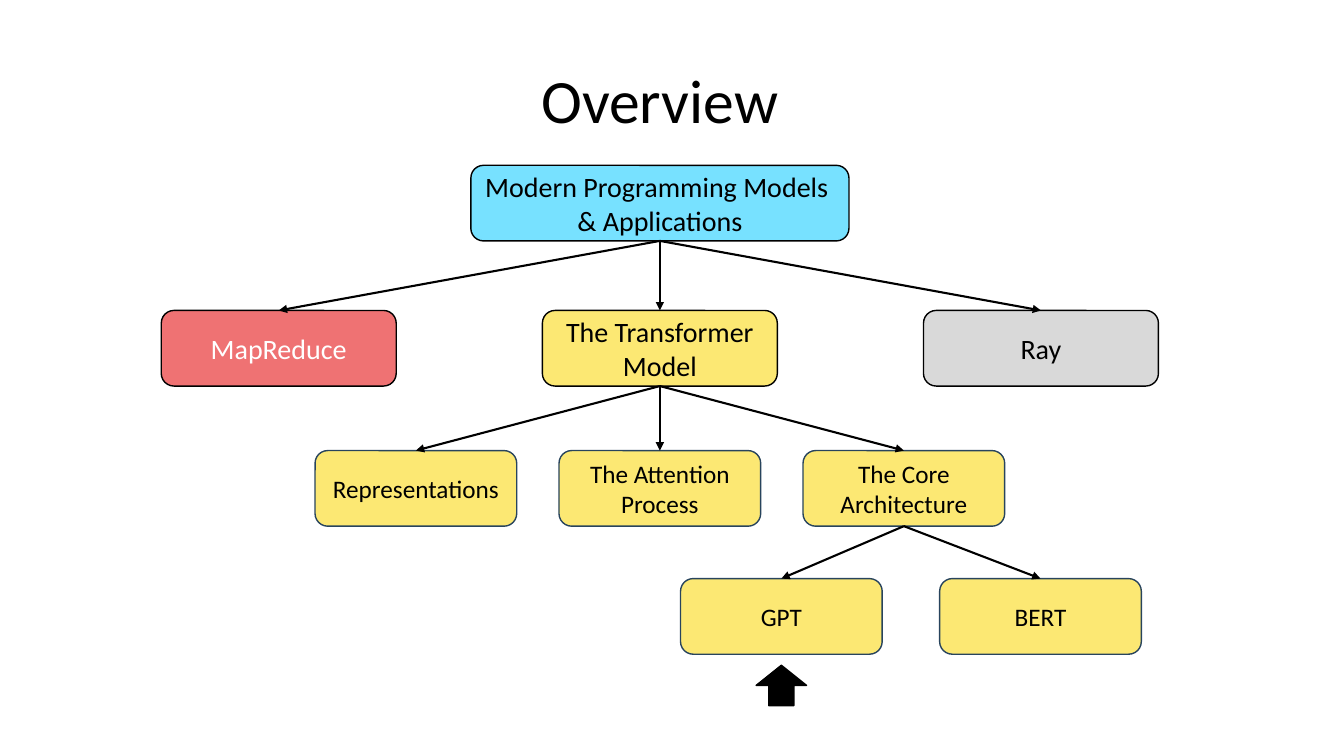
import pptx
import pptx.util
import pptx.dml.color
import pptx.enum.shapes
import pptx.enum.text
import pptx.oxml.ns
import lxml.etree

Inches = pptx.util.Inches
Pt = pptx.util.Pt
SHAPE = pptx.enum.shapes.MSO_SHAPE
COLOURS = {
    "black": "000000",
    "white": "FFFFFF",
    "blue": "77E1FF",
    "red": "EF7273",
    "yellow": "FCE873",
    "grey": "D9D9D9",
    "navy": "28445D",
}


def colour(name):
    return pptx.dml.color.RGBColor.from_string(COLOURS[name])


def write(box, text, size, ink):
    frame = box.text_frame
    frame.word_wrap = True
    frame.vertical_anchor = pptx.enum.text.MSO_ANCHOR.MIDDLE
    para = frame.paragraphs[0]
    para.text = text
    para.alignment = pptx.enum.text.PP_ALIGN.CENTER
    para.font.name = "Calibri"
    para.font.size = Pt(size)
    para.font.color.rgb = colour(ink)
    return para


deck = pptx.Presentation()
deck.slide_width = Inches(13.33)
deck.slide_height = Inches(7.5)
page = deck.slides.add_slide(deck.slide_layouts[6])

title = page.shapes.add_textbox(Inches(1.92), Inches(0.3), Inches(9.25), Inches(1.45))
write(title, "Overview", 44, "black").line_spacing = 0.9

centre = 6.545
branch_gap = 3.78
topic_gap = 2.42
box_height = 0.75
root = "Modern Programming Models \v& Applications"
model = "The Transformer Model"
core = "The Core Architecture"

levels = [
    (1.64, 3.75, 20, "black", [(root, centre, "blue", "black", None)]),
    (3.08, 2.33, 20, "black", [
        ("MapReduce", centre - branch_gap, "red", "white", root),
        (model, centre, "yellow", "black", root),
        ("Ray", centre + branch_gap, "grey", "black", root),
    ]),
    (4.47, 2, 18, "navy", [
        ("Representations", centre - topic_gap, "yellow", "black", model),
        ("The Attention Process", centre, "yellow", "black", model),
        (core, centre + topic_gap, "yellow", "black", model),
    ]),
    (5.74, 2, 18, "navy", [
        ("GPT", 7.75, "yellow", "black", core),
        ("BERT", 10.32, "yellow", "black", core),
    ]),
]

nodes = {}
for top, width, size, outline, entries in levels:
    for text, middle, fill, ink, parent in entries:
        node = page.shapes.add_shape(
            SHAPE.ROUNDED_RECTANGLE,
            Inches(middle - width / 2), Inches(top), Inches(width), Inches(box_height),
        )
        node.shadow.inherit = False
        node.fill.solid()
        node.fill.fore_color.rgb = colour(fill)
        node.line.color.rgb = colour(outline)
        node.line.width = Pt(1)
        write(node, text, size, ink)
        nodes[text] = node
        if parent:
            link = page.shapes.add_connector(
                pptx.enum.shapes.MSO_CONNECTOR.STRAIGHT, 0, 0, 0, 0
            )
            link.begin_connect(nodes[parent], 2)
            link.end_connect(node, 0)
            link.line.color.rgb = colour("black")
            link.line.width = Pt(1.5)
            outline_xml = link.line._get_or_add_ln()
            lxml.etree.SubElement(
                outline_xml, pptx.oxml.ns.qn("a:tailEnd"), type="triangle"
            )
            lxml.etree.SubElement(
                link._element.spPr, pptx.oxml.ns.qn("a:effectLst")
            )

marker = page.shapes.add_shape(
    SHAPE.UP_ARROW, Inches(7.5), Inches(6.6), Inches(0.5), Inches(0.4)
)
marker.shadow.inherit = False
marker.fill.solid()
marker.fill.fore_color.rgb = colour("black")
marker.line.color.rgb = colour("black")
marker.line.width = Pt(1)

deck.save("out.pptx")
